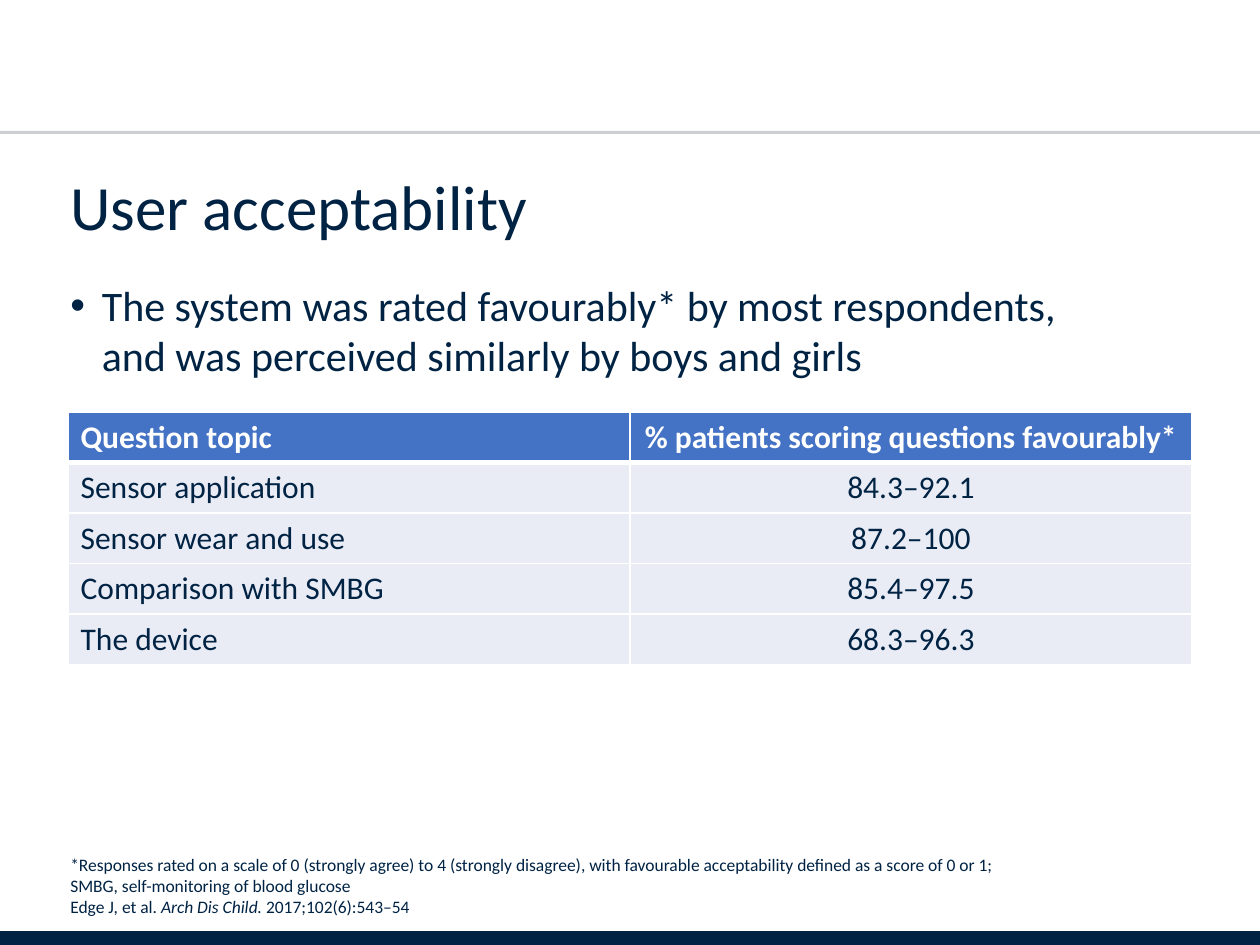
from dataclasses import dataclass

from lxml import etree
from pptx import Presentation
from pptx import util as u
from pptx.dml import color
from pptx.enum import shapes, text
from pptx.oxml import ns


@dataclass(frozen=True)
class Theme:
    font: str = "Calibri"
    navy: str = "002344"
    grey: str = "9DA1A6"
    white: str = "FFFFFF"
    header: str = "4472C4"
    band: str = "E9EBF5"
    title_size: int = 36
    body_size: int = 24
    table_size: int = 18
    note_size: int = 10


THEME = Theme()
LEFT, WIDTH = 0.46, 9.13
ROWS = [
    ("Question topic", "% patients scoring questions favourably*"),
    ("Sensor application", "84.3–92.1"),
    ("Sensor wear and use", "87.2–100"),
    ("Comparison with SMBG", "85.4–97.5"),
    ("The device", "68.3–96.3"),
]
NOTE_LINES = [
    [("*Responses rated on a scale of 0 (strongly agree) to 4 (strongly disagree), "
      "with favourable acceptability defined as a score of 0 or 1;", False)],
    [("SMBG, self-monitoring of blood glucose", False)],
    [("Edge J, et al. ", False), ("Arch Dis Child. ", True), ("2017;102(6):543–54", False)],
]


def rgb(value):
    return color.RGBColor.from_string(value)


def add_child(parent, tag, **attributes):
    return etree.SubElement(parent, ns.qn(tag), attributes)


def style_font(font, size, tint=THEME.navy, bold=False):
    font.name = THEME.font
    font.size = u.Pt(size)
    font.bold = bold
    font.color.rgb = rgb(tint)


def add_rule(page, top, tint, weight, opacity=100):
    rule = page.shapes.add_connector(
        shapes.MSO_CONNECTOR.STRAIGHT,
        u.Inches(0), u.Inches(top), u.Inches(10), u.Inches(top),
    )
    rule.line.color.rgb = rgb(tint)
    rule.line.width = u.Pt(weight)
    if opacity < 100:
        fill = rule.line._ln.find(ns.qn("a:solidFill"))
        add_child(fill[0], "a:alpha", val=str(opacity * 1000))
    add_child(rule._element.spPr, "a:effectLst")


def add_text(page, top, height, lines, size, anchor=text.MSO_ANCHOR.TOP):
    box = page.shapes.add_textbox(
        u.Inches(LEFT), u.Inches(top), u.Inches(WIDTH), u.Inches(height)
    )
    frame = box.text_frame
    frame.word_wrap = True
    frame.vertical_anchor = anchor
    para = frame.paragraphs[0]
    for index, line in enumerate(lines):
        if index:
            para.add_line_break()
        for words, italic in line:
            span = para.add_run()
            span.text = words
            if italic:
                span.font.italic = True
    style_font(para.font, size)
    return para


def add_bullet(para, indent):
    properties = para._p.get_or_add_pPr()
    properties.set("marL", str(u.Inches(indent)))
    properties.set("indent", str(-u.Inches(indent)))
    bullet_font = etree.Element(ns.qn("a:buFont"), typeface="Arial")
    bullet = etree.Element(ns.qn("a:buChar"), char="•")
    properties.insert(0, bullet_font)
    properties.insert(1, bullet)


def add_borders(cell, weights):
    properties = cell._tc.get_or_add_tcPr()
    for side, weight in weights.items():
        border = add_child(properties, f"a:ln{side}", w=str(u.Pt(weight)))
        fill = add_child(border, "a:solidFill")
        add_child(fill, "a:srgbClr", val=THEME.white)


def add_score_table(page):
    table = page.shapes.add_table(
        len(ROWS), 2, u.Inches(0.54), u.Inches(3.27), u.Inches(8.92), u.Inches(2)
    ).table
    for row, values in enumerate(ROWS):
        heading = row == 0
        for column, value in enumerate(values):
            cell = table.cell(row, column)
            top = 3 if row == 1 else 1
            bottom = 3 if heading else 1
            add_borders(cell, {"L": 1, "R": 1, "T": top, "B": bottom})
            cell.fill.solid()
            cell.fill.fore_color.rgb = rgb(THEME.header if heading else THEME.band)
            para = cell.text_frame.paragraphs[0]
            para.text = value
            para.alignment = text.PP_ALIGN.CENTER if column else text.PP_ALIGN.LEFT
            tint = THEME.white if heading else THEME.navy
            style_font(para.font, THEME.table_size, tint, heading)


def main():
    deck = Presentation()
    deck.slide_width = u.Inches(10)
    deck.slide_height = u.Inches(7.5)
    page = deck.slides.add_slide(deck.slide_layouts[6])

    add_rule(page, 7.46, THEME.navy, 10)
    add_rule(page, 1.05, THEME.grey, 1.75, opacity=50)

    title = add_text(page, 1.25, 0.74, [[("User acceptability", False)]],
                     THEME.title_size, text.MSO_ANCHOR.BOTTOM)
    title.line_spacing = 0.9

    finding = add_text(page, 2.17, 4.76, [
        [("The system was rated favourably* by most respondents, ", False)],
        [("and was perceived similarly by boys and girls", False)],
    ], THEME.body_size)
    add_bullet(finding, 0.25)

    add_text(page, 7.03, 0.3, NOTE_LINES, THEME.note_size, text.MSO_ANCHOR.BOTTOM)
    add_score_table(page)
    deck.save("out.pptx")


if __name__ == "__main__":
    main()
